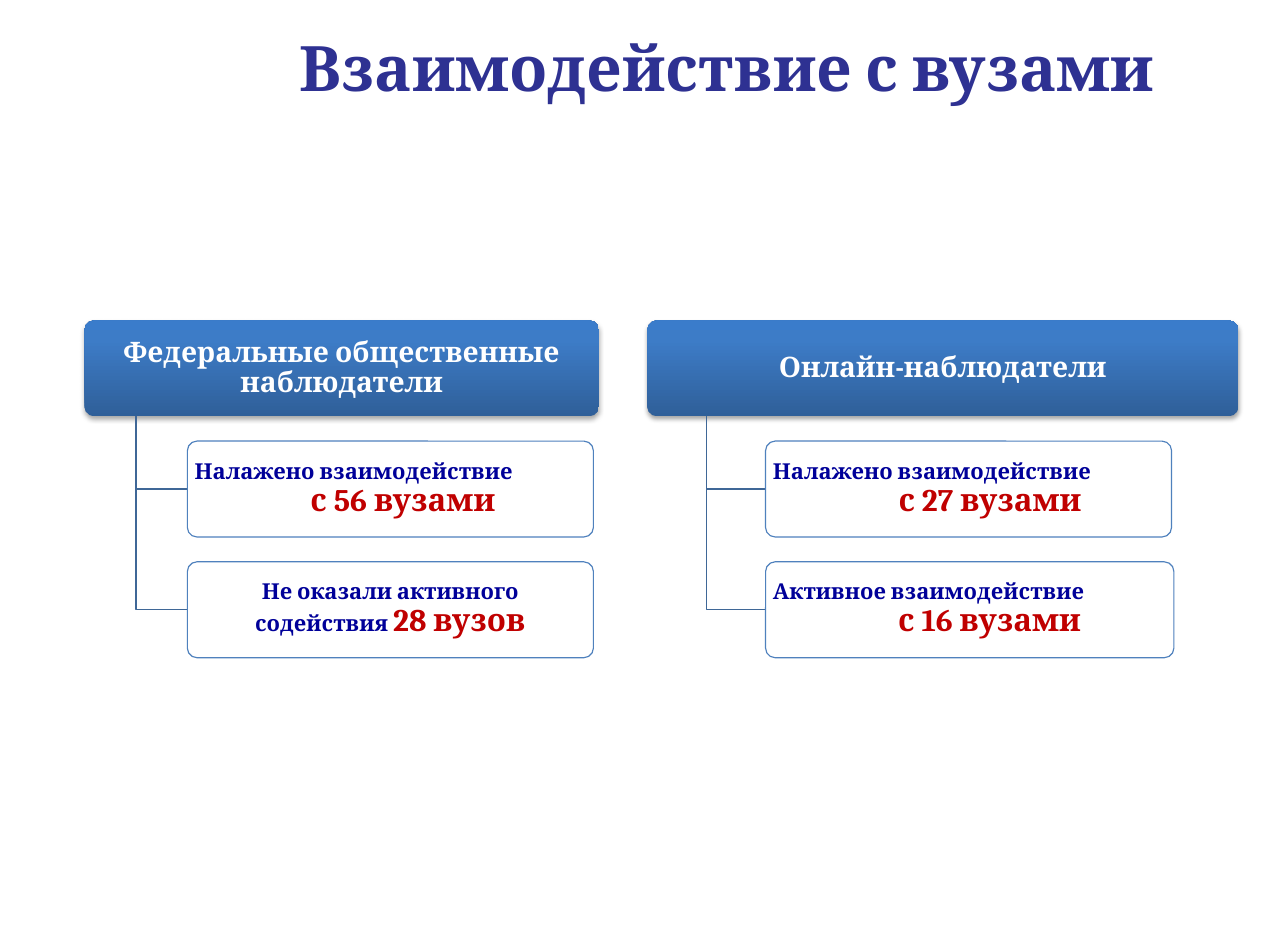
from copy import deepcopy

from lxml import etree
from pptx import Presentation
from pptx.dml.color import RGBColor
from pptx.enum.shapes import MSO_SHAPE
from pptx.enum.text import MSO_ANCHOR, MSO_AUTO_SIZE, PP_ALIGN
from pptx.oxml.ns import qn
from pptx.util import Inches, Pt

ROUNDED = MSO_SHAPE.ROUNDED_RECTANGLE
LEFT, CENTER = PP_ALIGN.LEFT, PP_ALIGN.CENTER
TOP, MIDDLE = MSO_ANCHOR.TOP, MSO_ANCHOR.MIDDLE
NO_AUTOFIT = MSO_AUTO_SIZE.NONE

TITLE_BLUE = RGBColor(0x2E, 0x31, 0x92)
DEEP_BLUE = RGBColor(0x2F, 0x5F, 0x99)
MID_BLUE = RGBColor(0x3D, 0x7C, 0xC7)
LIGHT_BLUE = RGBColor(0x3A, 0x7C, 0xCB)
BRANCH_BLUE = RGBColor(0x3F, 0x67, 0x97)
BORDER_BLUE = RGBColor(0x4F, 0x81, 0xBD)
TEXT_BLUE = RGBColor(0x00, 0x00, 0x99)
RED = RGBColor(0xC0, 0x00, 0x00)
WHITE = RGBColor(0xFF, 0xFF, 0xFF)
BLACK = RGBColor(0x00, 0x00, 0x00)

TITLE_FONT = {"name": "Cambria", "size": Pt(40), "bold": True}
HEADER_FONT = {"name": "Cambria", "size": Pt(18), "bold": True}
LABEL_FONT = {"name": "Cambria", "size": Pt(14), "bold": True}
COUNT_FONT = {"name": "Cambria", "size": Pt(20), "bold": True}

BOX_HEIGHT = 0.85
ROW_STEP = 1.07  # box height plus the gap below it

# Each item: box width, then paragraphs as (alignment, indent, label, count)
COLUMNS = [
    {"box": (0.75, 2.84, 4.56), "header": "Федеральные общественные наблюдатели",
     "items": [
         (3.6, [(LEFT, 0, "Налажено взаимодействие", ""),
                (CENTER, 0.22, "", "с 56 вузами")]),
         (3.6, [(CENTER, 0, "Не оказали активного содействия ", "28 вузов")])]},
    {"box": (5.74, 2.84, 5.24), "header": "Онлайн-наблюдатели",
     "items": [
         (3.6, [(LEFT, 0, "Налажено взаимодействие", ""),
                (CENTER, 0.38, "", "с 27 вузами")]),
         (3.62, [(LEFT, 0, "Активное взаимодействие", ""),
                 (CENTER, 0.35, "", "с 16 вузами")])]},
]


def add_alpha(color_element, percent):
    etree.SubElement(color_element, qn("a:alpha"), val=str(percent * 1000))


def add_outer_shadow(effects, blur, distance, angle, opacity):
    shadow = etree.SubElement(
        effects, qn("a:outerShdw"), blurRad=str(Pt(blur)), dist=str(Pt(distance)),
        dir=str(angle * 60000), rotWithShape="0")
    color = etree.SubElement(shadow, qn("a:srgbClr"), val=str(BLACK))
    add_alpha(color, opacity)


def format_frame(frame, anchor, side, edge):
    values = {"word_wrap": True, "auto_size": NO_AUTOFIT, "vertical_anchor": anchor,
              "margin_left": Inches(side), "margin_right": Inches(side),
              "margin_top": Inches(edge), "margin_bottom": Inches(edge)}
    for name, value in values.items():
        setattr(frame, name, value)


def add_run(paragraph, text, font_values, color):
    run = paragraph.add_run()
    run.text = text
    for name, value in font_values.items():
        setattr(run.font, name, value)
    run.font.color.rgb = color
    return run


def add_rounded_box(slide, left, top, width):
    box = slide.shapes.add_shape(ROUNDED, Inches(left), Inches(top),
                                 Inches(width), Inches(BOX_HEIGHT))
    box.adjustments[0] = 0.1
    box.shadow.inherit = False
    format_frame(box.text_frame, MIDDLE, 0.04, 0.03)
    return box


def add_title(slide, left, top, width, height):
    title = slide.shapes.title
    title.left, title.top = Inches(left), Inches(top)
    title.width, title.height = Inches(width), Inches(height)
    format_frame(title.text_frame, TOP, 0.13, 0.06)
    paragraph = title.text_frame.paragraphs[0]
    paragraph.alignment = CENTER
    run = add_run(paragraph, "Взаимодействие с вузами", TITLE_FONT, TITLE_BLUE)
    effects = etree.Element(qn("a:effectLst"))
    run.font._element.find(qn("a:solidFill")).addnext(effects)
    add_outer_shadow(effects, 3, 3, 45, 43)


def add_header(slide, left, top, width, text):
    header = add_rounded_box(slide, left, top, width)
    header.line.fill.background()
    # Three-stop gradient, dark at the bottom
    header.fill.gradient()
    header.fill.gradient_angle = 90
    properties = header._element.spPr
    stop_list = properties.find(qn("a:gradFill")).find(qn("a:gsLst"))
    stop_list.append(deepcopy(stop_list[-1]))
    stops = [(0, DEEP_BLUE), (0.8, MID_BLUE), (1, LIGHT_BLUE)]
    for stop, (position, color) in zip(header.fill.gradient_stops, stops):
        stop.position = position
        stop.color.rgb = color
    add_outer_shadow(properties.find(qn("a:effectLst")), 3.1, 1.8, 90, 35)
    paragraph = header.text_frame.paragraphs[0]
    paragraph.alignment = CENTER
    paragraph.line_spacing = 0.9
    add_run(paragraph, text, HEADER_FONT, WHITE)


def add_branch(slide, left, top, right, bottom):
    builder = slide.shapes.build_freeform(Inches(left), Inches(top))
    builder.add_line_segments([(Inches(left), Inches(bottom)),
                               (Inches(right), Inches(bottom))], close=False)
    branch = builder.convert_to_shape()
    branch.shadow.inherit = False
    branch.fill.background()
    branch.line.color.rgb = BRANCH_BLUE
    branch.line.width = Pt(0.75)


def add_item(slide, left, top, width, paragraphs):
    item = add_rounded_box(slide, left, top, width)
    item.fill.solid()
    item.fill.fore_color.rgb = WHITE
    add_alpha(item._element.spPr.find(qn("a:solidFill"))[0], 90)
    item.line.color.rgb = BORDER_BLUE
    item.line.width = Pt(0.75)
    frame = item.text_frame
    for index, (alignment, indent, label, count) in enumerate(paragraphs):
        paragraph = frame.add_paragraph() if index else frame.paragraphs[0]
        paragraph.alignment = alignment
        paragraph.line_spacing = 0.9
        paragraph._p.get_or_add_pPr().set("marL", str(Inches(indent)))
        if label:
            add_run(paragraph, label, LABEL_FONT, TEXT_BLUE)
        if count:
            add_run(paragraph, count, COUNT_FONT, RED)


def add_column(slide, left, top, width, header, items):
    add_header(slide, left, top, width, header)
    # Branches leave at a tenth of the header width, items start at a fifth
    stem, item_left = left + width / 10, left + width / 5
    for row, (item_width, paragraphs) in enumerate(items, start=1):
        item_top = top + row * ROW_STEP
        add_branch(slide, stem, top + BOX_HEIGHT, item_left, item_top + BOX_HEIGHT / 2)
        add_item(slide, item_left, item_top, item_width, paragraphs)


def main():
    presentation = Presentation()
    presentation.slide_width = Inches(11.42)
    presentation.slide_height = Inches(8.27)
    slide = presentation.slides.add_slide(presentation.slide_layouts[5])
    add_title(slide, 1.66, 0.2, 9.57, 0.8)
    for column in COLUMNS:
        add_column(slide, *column["box"], column["header"], column["items"])
    presentation.save("out.pptx")


if __name__ == "__main__":
    main()
